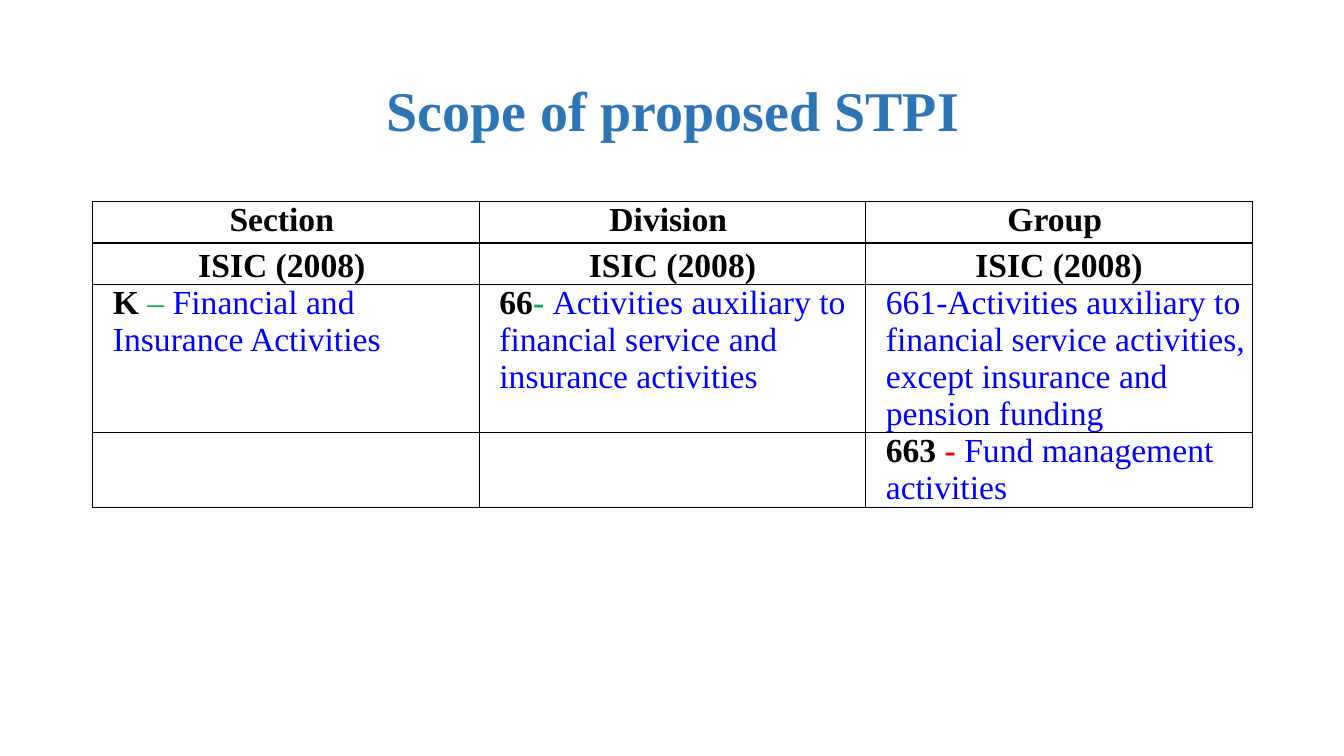
from lxml.etree import SubElement
from pptx import Presentation
from pptx.dml.color import RGBColor
from pptx.enum.text import MSO_ANCHOR as Anchor, PP_ALIGN as Align
from pptx.oxml.ns import qn
from pptx.util import Inches, Pt

FONT = "Times New Roman"
COLORS = {
    "title": "2E75B6",
    "black": "000000",
    "white": "FFFFFF",
    "blue": "0000FF",
    "green": "00B050",
    "red": "FF0000",
}
LEFT, WIDTH = 0.92, 11.5
ROW_HEIGHT = 0.41

# Heading rows: one text per column
HEADINGS = [
    ["Section ", "Division ", "Group "],
    ["ISIC (2008) ", "ISIC (2008)", "ISIC (2008)"],
]
# Body rows: each cell is a list of (text, color, bold)
ENTRIES = [
    [
        [("K", "black", True), (" – ", "green", False),
         ("Financial and Insurance Activities", "blue", False)],
        [("66", "black", True), ("- ", "green", True),
         ("Activities auxiliary to financial service and insurance activities",
          "blue", False)],
        [("661-Activities auxiliary to financial service activities, "
          "except insurance and pension funding", "blue", False)],
    ],
    [
        [],
        [],
        [("663 ", "black", True), ("- ", "red", True),
         ("Fund management activities", "blue", False)],
    ],
]


def rgb(name):
    return RGBColor.from_string(COLORS[name])


def set_font(font, size, color, bold):
    font.name = FONT
    font.size = Pt(size)
    font.bold = bold
    font.color.rgb = rgb(color)


def add_title(slide, text):
    title = slide.shapes.title
    title.left, title.top = Inches(LEFT), Inches(0.4)
    title.width, title.height = Inches(WIDTH), Inches(1.45)
    title.text_frame.vertical_anchor = Anchor.MIDDLE
    paragraph = title.text_frame.paragraphs[0]
    paragraph.text = text
    paragraph.alignment = Align.CENTER
    paragraph.line_spacing = 0.9
    set_font(paragraph.font, 40, "title", True)


def format_cell(cell):
    cell.margin_left = cell.margin_right = 0
    cell.margin_top = cell.margin_bottom = 0
    properties = cell._tc.get_or_add_tcPr()
    for side in ("lnL", "lnR", "lnT", "lnB"):
        line = SubElement(properties, qn(f"a:{side}"), w=str(Pt(1)))
        fill = SubElement(line, qn("a:solidFill"))
        SubElement(fill, qn("a:srgbClr"), val=COLORS["black"])
    cell.fill.solid()
    cell.fill.fore_color.rgb = rgb("white")


def write_heading(cell, text, anchor):
    cell.vertical_anchor = anchor
    paragraph = cell.text_frame.paragraphs[0]
    paragraph.text = text
    paragraph.alignment = Align.CENTER
    set_font(paragraph.font, 24, "black", True)


def write_entry(cell, parts):
    paragraph = cell.text_frame.paragraphs[0]
    paragraph._p.get_or_add_pPr().set("marL", str(Inches(0.2)))
    for text, color, bold in parts:
        run = paragraph.add_run()
        run.text = text
        set_font(run.font, 24, color, bold)


def add_scope_table(slide):
    row_count = len(HEADINGS) + len(ENTRIES)
    frame = slide.shapes.add_table(
        row_count, len(HEADINGS[0]), Inches(LEFT), Inches(2),
        Inches(WIDTH), Inches(ROW_HEIGHT * row_count))
    table = frame.table
    table.first_row = table.horz_banding = False
    for cell in table.iter_cells():
        format_cell(cell)
    for row, texts in enumerate(HEADINGS):
        anchor = Anchor.BOTTOM if row else Anchor.TOP
        for column, text in enumerate(texts):
            write_heading(table.cell(row, column), text, anchor)
    for row, entries in enumerate(ENTRIES, start=len(HEADINGS)):
        for column, parts in enumerate(entries):
            if parts:
                write_entry(table.cell(row, column), parts)
    frame.height = Inches(3.22)


def main():
    presentation = Presentation()
    presentation.slide_width = Inches(13.33)
    presentation.slide_height = Inches(7.5)
    slide = presentation.slides.add_slide(presentation.slide_layouts[5])
    add_title(slide, "Scope of proposed STPI")
    add_scope_table(slide)
    presentation.save("out.pptx")


if __name__ == "__main__":
    main()
